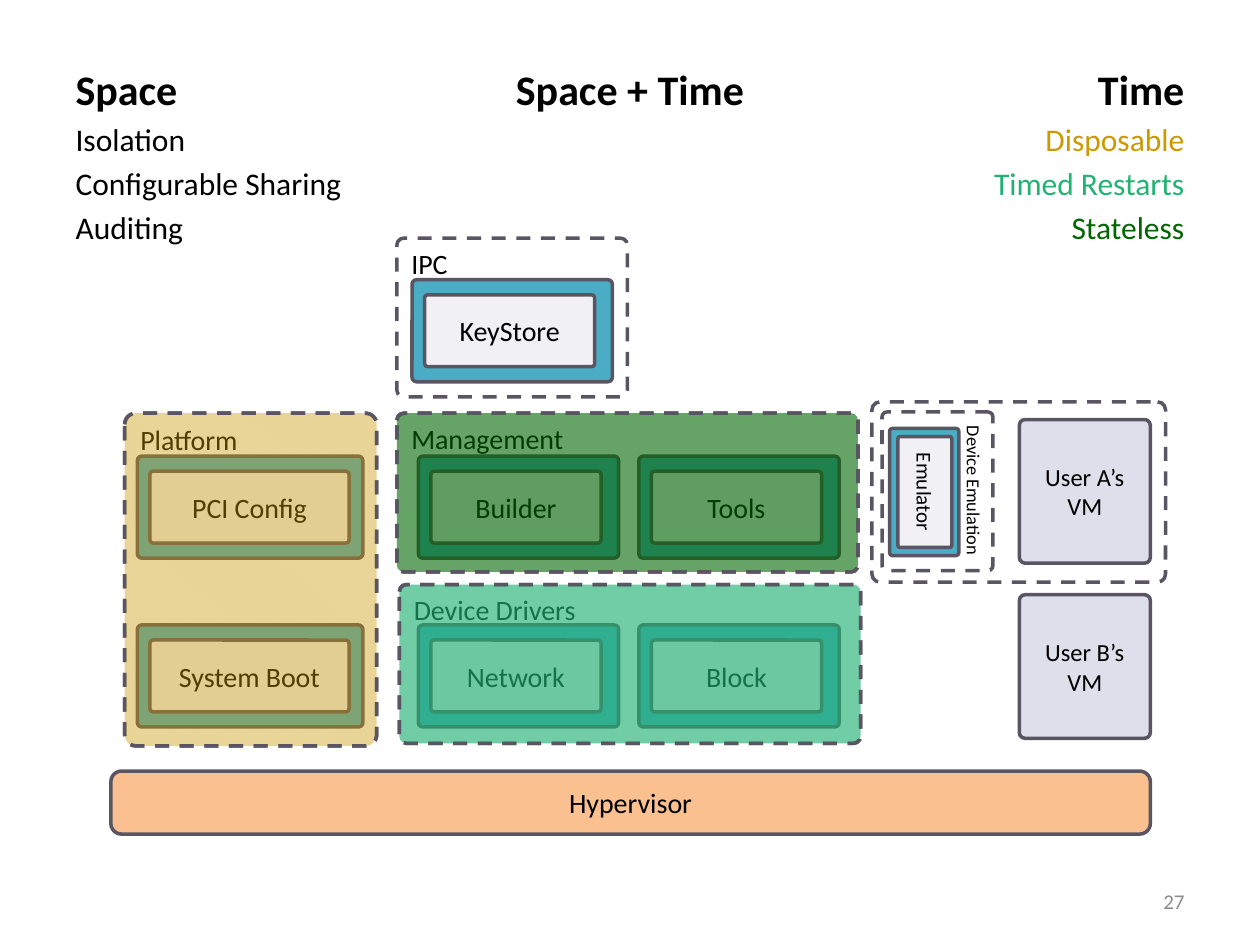
"""Build a slide that sorts hypervisor components by isolation in space and time."""
from lxml import etree
from pptx import Presentation
from pptx.dml.color import RGBColor
from pptx.enum import dml, shapes, text
from pptx.oxml.ns import qn
from pptx.util import Inches, Pt

WIDTH, HEIGHT = 10, 7.5
FONT, INK, EDGE, SHELL, CORE = "Calibri", "000000", "595562", "4BACC6", "F1F1F5"
GOLD, MINT, GREEN = "CC9900", "22B273", "006600"
LEFT, CENTER, RIGHT = text.PP_ALIGN.LEFT, text.PP_ALIGN.CENTER, text.PP_ALIGN.RIGHT
TOP, MIDDLE = text.MSO_ANCHOR.TOP, text.MSO_ANCHOR.MIDDLE

HEADINGS = [
    ((0.5, 0.45, 9, 1.63), CENTER, [("Space + Time", INK)]),
    ((0.5, 0.45, 4.48, 1.63), LEFT,
     [("Space", INK), ("Isolation", INK), ("Configurable Sharing", INK), ("Auditing", INK)]),
    ((4.99, 0.45, 4.51, 1.63), RIGHT,
     [("Time", INK), ("Disposable", GOLD), ("Timed Restarts", MINT), ("Stateless", GREEN)]),
]
GUESTS = [("User A’s VM", 3.33), ("User B’s VM", 4.72)]
ZONES = [
    ("Platform", (0.99, 3.28, 2, 2.64), GOLD, 40),
    ("Device Drivers", (3.17, 4.64, 3.66, 1.26), MINT, 64),
    ("Management", (3.15, 3.28, 3.66, 1.26), GREEN, 60),
    ("IPC", (3.15, 1.89, 1.83, 1.26), None, None),
]
COLUMNS = {"platform": (1.09, 1.79, 1.58), "ipc": (3.27, 1.59, 1.35),
           "first": (3.32, 1.59, 1.35), "second": (5.07, 1.59, 1.35)}
ROWS = {"ipc": 2.22, "upper": 3.62, "lower": 4.96}
COMPONENTS = [
    ("System Boot", "platform", "lower"), ("PCI Config", "platform", "upper"),
    ("Network", "first", "lower"), ("Block", "second", "lower"),
    ("Builder", "first", "upper"), ("Tools", "second", "upper"),
    ("KeyStore", "ipc", "ipc"),
]
SHELL_HEIGHT, CORE_HEIGHT, CORE_INSET = 0.81, 0.57, 0.1


def color(value):
    return RGBColor.from_string(value)


def write(para, words, size, ink=INK, align=LEFT, bold=False):
    para.alignment = align
    span = para.add_run()
    span.text = words
    span.font.name, span.font.size, span.font.bold = FONT, Pt(size), bold
    span.font.color.rgb = color(ink)


def place(shape, box):
    shape.left, shape.top, shape.width, shape.height = map(Inches, box)


def add_box(page, box, fill=None, alpha=None, dashed=False, turn=0, corner=0.044):
    shape = page.shapes.add_shape(shapes.MSO_SHAPE.ROUNDED_RECTANGLE, *map(Inches, box))
    shape.adjustments[0] = corner
    shape.shadow.inherit = False
    shape.rotation = turn
    shape.line.color.rgb, shape.line.width = color(EDGE), Pt(2)
    if dashed:
        shape.line.dash_style = dml.MSO_LINE.DASH
    if fill is None:
        shape.fill.background()
    else:
        shape.fill.solid()
        shape.fill.fore_color.rgb = color(fill)
    if alpha:
        tone = shape.fill._xPr.find(".//" + qn("a:srgbClr"))
        etree.SubElement(tone, qn("a:alpha"), val=str(alpha * 1000))
    return shape


def label(shape, words, size=16, align=CENTER, anchor=MIDDLE):
    frame = shape.text_frame
    frame.word_wrap, frame.vertical_anchor = True, anchor
    write(frame.paragraphs[0], words, size, align=align)


def add_headings(page):
    for holder, (box, align, lines) in zip(page.placeholders, HEADINGS):
        place(holder, box)
        frame = holder.text_frame
        frame.auto_size, frame.vertical_anchor = text.MSO_AUTO_SIZE.NONE, TOP
        for index, (words, ink) in enumerate(lines):
            para = frame.add_paragraph() if index else frame.paragraphs[0]
            size = 18 if index else 24
            write(para, words, size, ink, align, bold=not index)
            para.space_before = Pt(size * 0.2)
            settings = para._p.get_or_add_pPr()
            settings.set("marL", "0")
            settings.set("indent", "0")
            etree.SubElement(settings, qn("a:buNone"))


def add_zones(page):
    for words, box, tint, alpha in ZONES:
        frame = add_box(page, box, dashed=True)
        if words == "Platform":
            frame.fill.patterned()
            frame.fill.pattern = dml.MSO_PATTERN.DARK_DOWNWARD_DIAGONAL
            frame.fill.fore_color.rgb, frame.fill.back_color.rgb = color(CORE), color("FFFFFF")
        label(frame, words, align=LEFT, anchor=TOP)


def add_components(page):
    for words, column, row in COMPONENTS:
        left, shell_width, core_width = COLUMNS[column]
        top = ROWS[row]
        add_box(page, (left, top, shell_width, SHELL_HEIGHT), SHELL)
        core = (left + CORE_INSET, top + (SHELL_HEIGHT - CORE_HEIGHT) / 2, core_width, CORE_HEIGHT)
        label(add_box(page, core, CORE), words)


def add_emulation(page):
    frame = add_box(page, (6.81, 3.46, 1.26, 0.88), dashed=True, turn=90)
    label(frame, "Device Emulation", 10.5, LEFT, TOP)
    add_box(page, (6.83, 3.63, 1.01, 0.55), SHELL, turn=90)
    label(add_box(page, (6.9, 3.69, 0.88, 0.43), CORE, turn=90), "Emulator", 12)
    add_box(page, (7.37, 2.74, 1.43, 2.33), dashed=True, turn=90)


def main():
    deck = Presentation()
    deck.slide_width, deck.slide_height = Inches(WIDTH), Inches(HEIGHT)
    page = deck.slides.add_slide(deck.slide_layouts.get_by_name("Two Content"))
    add_headings(page)
    number = page.shapes.add_textbox(*map(Inches, (7.17, 6.95, 2.33, 0.4)))
    number.text_frame.word_wrap, number.text_frame.vertical_anchor = True, MIDDLE
    write(number.text_frame.paragraphs[0], "27", 12, "8C8C8C", RIGHT)
    label(add_box(page, (0.88, 6.12, 8.25, 0.5), "FAC090", corner=0.17), "Hypervisor")
    for words, top in GUESTS:
        label(add_box(page, (8.09, top, 1.04, 1.14), "DDDFEA"), words, 14)
    add_zones(page)
    add_components(page)
    add_emulation(page)
    for words, box, tint, alpha in ZONES:
        if tint:
            add_box(page, box, tint, alpha, dashed=True)
    deck.save("out.pptx")


if __name__ == "__main__":
    main()
